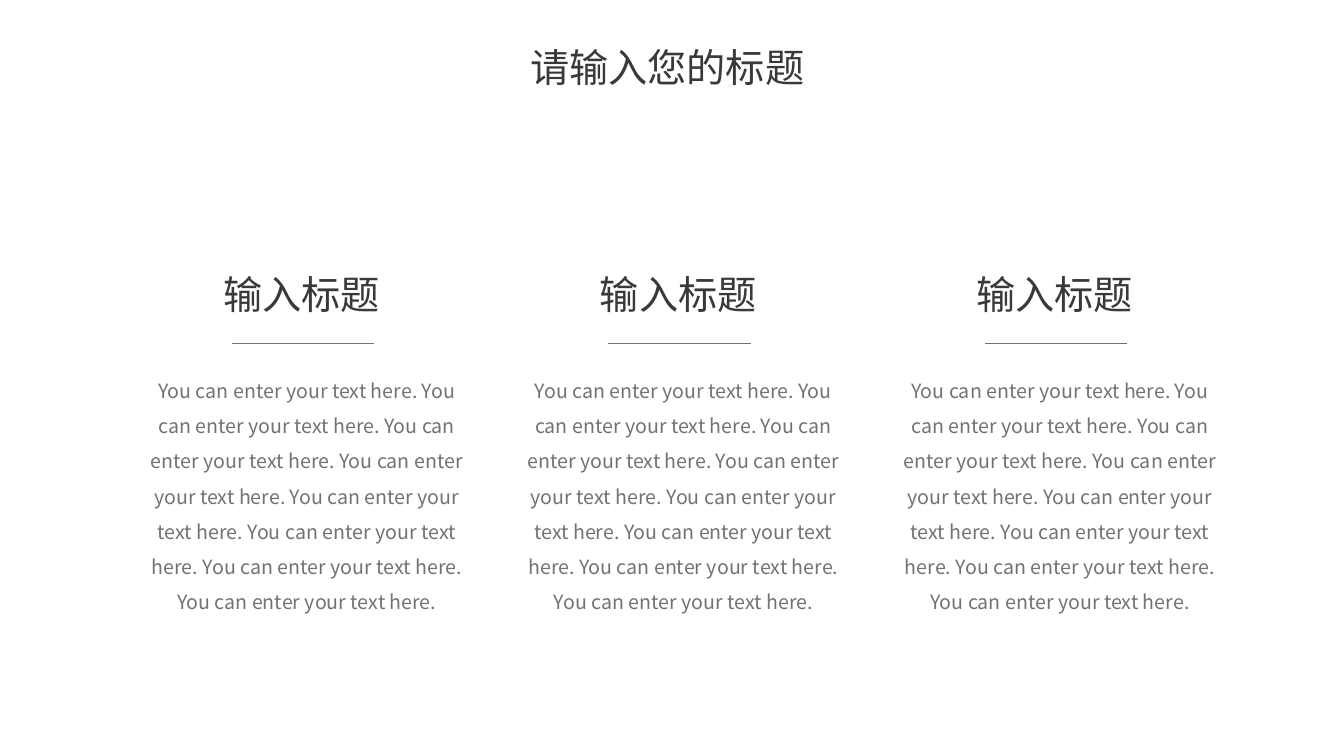
from lxml import etree
from pptx import Presentation
from pptx.dml.color import RGBColor
from pptx.enum.shapes import MSO_CONNECTOR
from pptx.enum.text import MSO_ANCHOR, MSO_AUTO_SIZE, PP_ALIGN
from pptx.oxml.ns import qn
from pptx.util import Cm, Pt

FONT = "Noto Sans CJK SC"
DARK, GREY = "3B3838", "767171"
COLUMNS = 3
COLUMN_PITCH = 9.49
BODY = " ".join(["You can enter your text here."] * 8)


def color(hex_string):
    return RGBColor.from_string(hex_string)


def write(sp, text, size, hex_string, align=PP_ALIGN.LEFT, spacing=1.0, wrap=True):
    """Fill a shape with one paragraph, using the font for Latin and Chinese."""
    tf = sp.text_frame
    tf.word_wrap = wrap
    tf.auto_size = MSO_AUTO_SIZE.SHAPE_TO_FIT_TEXT
    tf.vertical_anchor = MSO_ANCHOR.TOP
    p = tf.paragraphs[0]
    p.alignment = align
    p.line_spacing = spacing
    p.space_before = Pt(0)
    r = p.add_run()
    r.text = text
    r.font.size = Pt(size)
    r.font.name = FONT
    r.font.color.rgb = color(hex_string)
    etree.SubElement(r.font._element, qn("a:ea"), typeface=FONT)


prs = Presentation()
prs.slide_width, prs.slide_height = Cm(33.87), Cm(19.05)
s = prs.slides.add_slide(prs.slide_layouts[5])
s.background.fill.solid()
s.background.fill.fore_color.rgb = color("FFFFFF")

title = s.shapes.title
title.left, title.top, title.width, title.height = Cm(13.11), Cm(0.38), Cm(7.67), Cm(2.06)
write(title, "请输入您的标题", 28, DARK, spacing=1.5)

for i in range(COLUMNS):
    x = i * COLUMN_PITCH
    column = s.shapes.add_group_shape().shapes

    heading = column.add_textbox(Cm(5.38 + x), Cm(6.68), Cm(4.5), Cm(1.45))
    write(heading, "输入标题", 28, DARK, wrap=False)

    rule = column.add_connector(
        MSO_CONNECTOR.STRAIGHT, Cm(9.43 + x), Cm(8.64), Cm(5.84 + x), Cm(8.64))
    rule.line.color.rgb = color(GREY)
    rule.line.width = Pt(0.5)
    etree.SubElement(rule._element.spPr, qn("a:effectLst"))

    body = column.add_textbox(Cm(3.53 + x), Cm(9.12), Cm(8.41), Cm(6.45))
    write(body, BODY, 14, GREY, PP_ALIGN.CENTER, 1.5)

prs.save("out.pptx")
